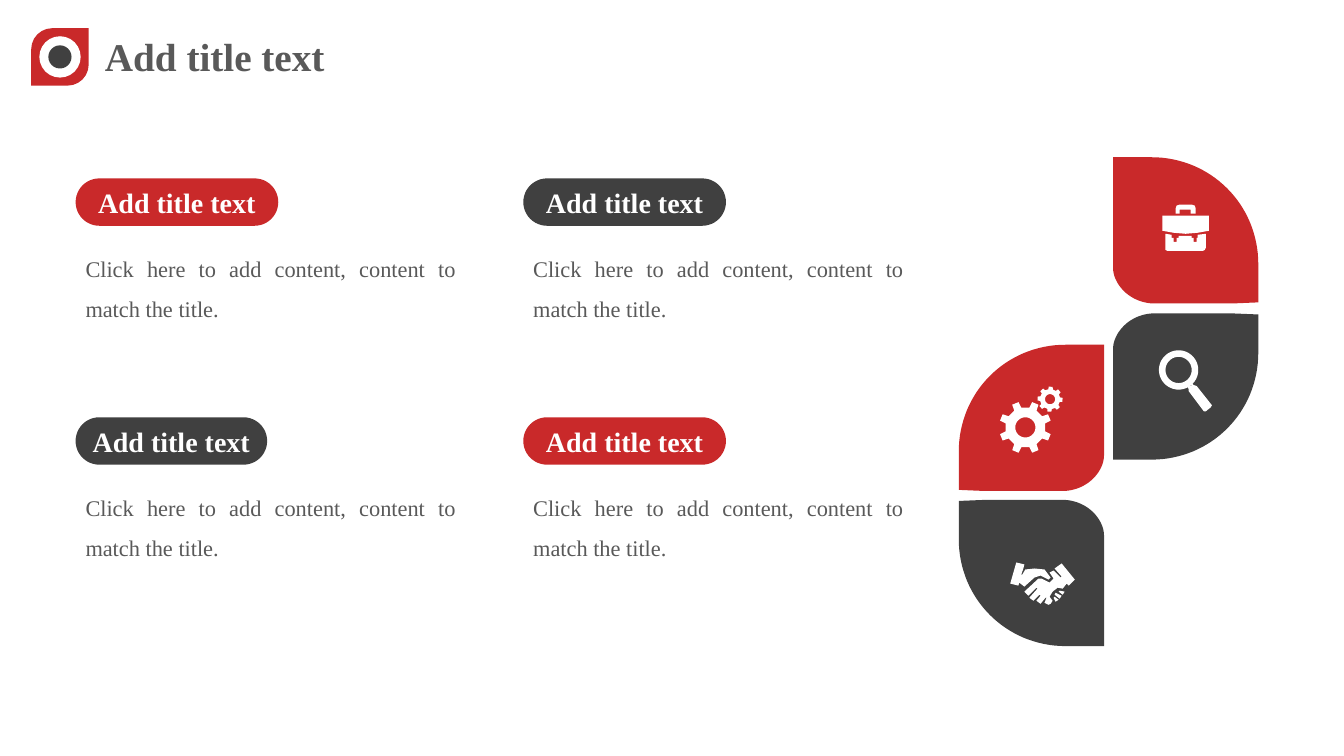
from math import cos, sin, radians
from pptx import Presentation
from pptx.dml.color import RGBColor
from pptx.enum.shapes import MSO_SHAPE
from pptx.enum.text import MSO_ANCHOR, PP_ALIGN
from pptx.util import Inches, Pt

RED, DARK, GRAY, WHITE = "C9292A", "404040", "595959", "FFFFFF"
FONT = "Times New Roman"
TITLE = "Add title text"
BODY = "Click here to add content, content to match the title."

# left, top, label width, color
CARDS = [
    (0.75, 1.77, 2.01, RED),
    (0.75, 4.14, 1.9, DARK),
    (5.19, 1.77, 2.01, DARK),
    (5.19, 4.14, 2.01, RED),
]
LABEL_HEIGHT, BODY_OFFSET = 0.47, 0.58
BODY_WIDTH, BODY_HEIGHT = 3.87, 0.86

# left, top, flipped across, flipped down, color
PETALS = [
    (9.51, 3.42, True, False, RED),
    (11.04, 1.56, False, False, RED),
    (9.51, 4.96, True, True, DARK),
    (11.04, 3.11, False, True, DARK),
]
PETAL_WIDTH, PETAL_HEIGHT = 1.44, 1.45

# shape, left, top, size, color
EMBLEM = [
    (MSO_SHAPE.ROUND_2_DIAG_RECTANGLE, 0.31, 0.28, 0.57, RED),
    (MSO_SHAPE.OVAL, 0.39, 0.36, 0.41, WHITE),
    (MSO_SHAPE.OVAL, 0.48, 0.45, 0.23, DARK),
]

BRIEFCASE = [
    [(11.96, 2.32), (11.96, 2.46), (11.95, 2.48), (11.93, 2.49), (11.58, 2.49),
     (11.56, 2.48), (11.56, 2.46), (11.56, 2.32), (11.62, 2.33), (11.62, 2.36),
     (11.64, 2.36), (11.64, 2.4), (11.67, 2.4), (11.67, 2.36), (11.69, 2.36),
     (11.69, 2.34), (11.82, 2.34), (11.82, 2.36), (11.84, 2.36), (11.84, 2.4),
     (11.87, 2.4), (11.87, 2.36), (11.88, 2.36), (11.88, 2.33)],
    [(11.7, 2.03), (11.82, 2.03), (11.85, 2.04), (11.86, 2.07), (11.86, 2.12),
     (11.81, 2.12), (11.81, 2.08), (11.7, 2.08), (11.7, 2.12), (11.66, 2.12),
     (11.66, 2.07), (11.67, 2.04)],
    [(11.53, 2.14), (11.53, 2.29), (11.64, 2.31), (11.76, 2.32), (11.88, 2.31),
     (11.99, 2.29), (11.99, 2.14)],
]
MAGNIFIER_HANDLE = [
    (11.83, 3.81), (11.84, 3.82), (11.87, 3.83), (12.02, 4.02), (12.01, 4.04),
    (11.96, 4.08), (11.94, 4.08), (11.79, 3.88), (11.79, 3.86), (11.78, 3.84),
    (11.81, 3.83)]
HANDSHAKE = [
    [(10.16, 5.6), (10.08, 5.58), (10.02, 5.79), (10.1, 5.81), (10.11, 5.78),
     (10.16, 5.82), (10.26, 5.73), (10.32, 5.71), (10.4, 5.75), (10.42, 5.73),
     (10.36, 5.65), (10.26, 5.64), (10.17, 5.65), (10.14, 5.7), (10.13, 5.7),
     (10.15, 5.64)],
    [(10.53, 5.59), (10.66, 5.75), (10.6, 5.81), (10.58, 5.79), (10.54, 5.84),
     (10.49, 5.83), (10.44, 5.87), (10.41, 5.92), (10.44, 5.96), (10.42, 5.99),
     (10.4, 6), (10.36, 5.98), (10.38, 5.93), (10.37, 5.93), (10.32, 5.99),
     (10.28, 5.96), (10.32, 5.91), (10.31, 5.9), (10.25, 5.96), (10.21, 5.93),
     (10.29, 5.84), (10.28, 5.83), (10.2, 5.91), (10.16, 5.87), (10.3, 5.74),
     (10.33, 5.74), (10.41, 5.78), (10.45, 5.74), (10.41, 5.68), (10.45, 5.66),
     (10.52, 5.73), (10.53, 5.72), (10.46, 5.64)],
    [(10.56, 5.87), (10.51, 5.86), (10.5, 5.87), (10.54, 5.9)],
    [(10.47, 5.97), (10.5, 5.95), (10.46, 5.92), (10.45, 5.93)],
    [(10.51, 5.94), (10.53, 5.91), (10.47, 5.88), (10.46, 5.9)],
]


def color_of(value):
    return RGBColor.from_string(value)


def finish(shape, color):
    """Give a shape a flat fill with no line or shadow."""
    shape.fill.solid()
    shape.fill.fore_color.rgb = color_of(color)
    shape.line.fill.background()
    shape.shadow.inherit = False


def write(shape, text, size, color, bold=False, **paragraph_format):
    paragraph = shape.text_frame.paragraphs[0]
    for name, value in paragraph_format.items():
        setattr(paragraph, name, value)
    run = paragraph.add_run()
    run.text = text
    for name, value in {"name": FONT, "size": Pt(size), "bold": bold}.items():
        setattr(run.font, name, value)
    run.font.color.rgb = color_of(color)


def add_preset(kind, left, top, width, height, color):
    shape = slide.shapes.add_shape(
        kind, Inches(left), Inches(top), Inches(width), Inches(height))
    finish(shape, color)
    return shape


def add_outline(contours, color):
    """Draw closed contours as one shape; inner contours become holes."""
    contours = [[(Inches(x), Inches(y)) for x, y in points] for points in contours]
    builder = slide.shapes.build_freeform(*contours[0][0])
    for number, points in enumerate(contours):
        if number:
            builder.move_to(*points[0])
        builder.add_line_segments(points[1:], close=True)
    finish(builder.convert_to_shape(), color)


def polar(center, radius, angle):
    return (center[0] + radius * cos(radians(angle)),
            center[1] + radius * sin(radians(angle)))


def circle(center, radius):
    return [polar(center, radius, angle) for angle in range(0, 360, 6)]


def gear(center, tip, root, hole, turn, tip_half, root_half):
    """Return an eight-toothed rim and its hole; angles are in degrees."""
    corners = [(root, -root_half), (tip, -tip_half), (tip, tip_half), (root, root_half)]
    rim = [polar(center, radius, turn + 45 * tooth + angle)
           for tooth in range(8) for radius, angle in corners]
    return [rim, circle(center, hole)]


def curve(start, control_1, control_2, end, steps=32):
    """Return points along a cubic Bezier curve."""
    points = []
    for step in range(steps + 1):
        t = step / steps
        weights = ((1 - t) ** 3, 3 * t * (1 - t) ** 2, 3 * t * t * (1 - t), t ** 3)
        points.append(tuple(
            sum(weight * value for weight, value in zip(weights, values))
            for values in zip(start, control_1, control_2, end)))
    return points


def petal(left, top, flip_x, flip_y):
    outline = [(0, 0), *curve((0.38, 0), (0.97, 0), (1.44, 0.47), (1.44, 1.06)),
               (1.44, 1.44), (1.2, 1.45),
               *curve((0.38, 1.45), (0.14, 1.43), (0, 1.24), (0, 1.1))]
    return [(left + (PETAL_WIDTH - x if flip_x else x),
             top + (PETAL_HEIGHT - y if flip_y else y)) for x, y in outline]


presentation = Presentation()
presentation.slide_width, presentation.slide_height = Inches(13.33), Inches(7.5)
slide = presentation.slides.add_slide(presentation.slide_layouts[5])

title = slide.shapes.title
for name, value in {"left": 0.94, "top": 0.27, "width": 2.41, "height": 0.57}.items():
    setattr(title, name, Inches(value))
title.text_frame.word_wrap = False
title.text_frame.vertical_anchor = MSO_ANCHOR.MIDDLE
write(title, TITLE, 28, GRAY, bold=True, alignment=PP_ALIGN.LEFT)

for kind, left, top, size, color in EMBLEM:
    part = add_preset(kind, left, top, size, size, color)
    if kind == MSO_SHAPE.ROUND_2_DIAG_RECTANGLE:
        part.adjustments[0] = 0.367

for *place, color in PETALS:
    add_outline([petal(*place)], color)

lens = (11.69, 3.67)
for icon in (
    BRIEFCASE,
    gear((10.17, 4.24), 0.26, 0.2, 0.1, 22.5, 7.5, 11)
    + gear((10.415, 3.96), 0.125, 0.1, 0.05, 3, 9, 13),
    [circle(lens, 0.195), circle(lens, 0.13), MAGNIFIER_HANDLE],
    HANDSHAKE,
):
    add_outline(icon, WHITE)

for left, top, width, color in CARDS:
    label = add_preset(MSO_SHAPE.ROUNDED_RECTANGLE, left, top, width, LABEL_HEIGHT, color)
    label.adjustments[0] = 0.5
    label.text_frame.vertical_anchor = MSO_ANCHOR.MIDDLE
    write(label, TITLE, 20, WHITE, bold=True, alignment=PP_ALIGN.CENTER)
    body = slide.shapes.add_textbox(
        Inches(left), Inches(top + BODY_OFFSET), Inches(BODY_WIDTH), Inches(BODY_HEIGHT))
    body.text_frame.word_wrap = True
    write(body, BODY, 16, GRAY, alignment=PP_ALIGN.JUSTIFY, line_spacing=1.5)

presentation.save("out.pptx")
